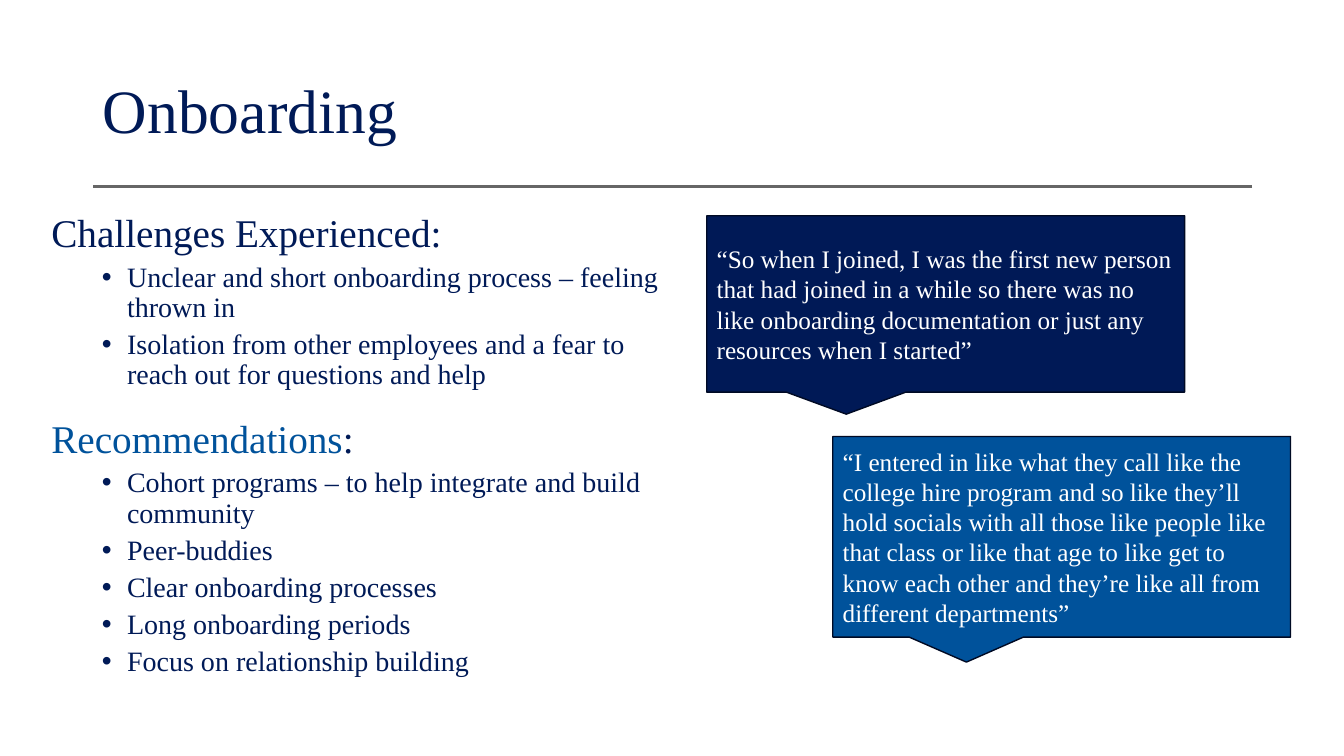
from lxml import etree
from pptx import Presentation, util as u
from pptx.dml.color import RGBColor
from pptx.enum import shapes, text
from pptx.oxml import ns

FONT = "Times New Roman"
COLORS = {"navy": "001A57", "deep": "001956", "blue": "00529B",
          "edge": "000A24", "rule": "666666", "white": "FFFFFF"}


def add_run(p, words, size, color):
    r = p.add_run()
    r.text = words
    r.font.name = FONT
    r.font.size = u.Pt(size)
    r.font.color.rgb = RGBColor.from_string(COLORS[color])


def set_bullet(p, left, indent, char=None):
    pPr = p._p.get_or_add_pPr()
    pPr.set("marL", str(u.Inches(left)))
    pPr.set("indent", str(u.Inches(indent)))
    if char is None:
        etree.SubElement(pPr, ns.qn("a:buNone"))
        return
    clr = etree.SubElement(pPr, ns.qn("a:buClr"))
    etree.SubElement(clr, ns.qn("a:srgbClr"), val=COLORS["navy"])
    etree.SubElement(pPr, ns.qn("a:buFont"), typeface="Arial")
    etree.SubElement(pPr, ns.qn("a:buChar"), char=char)


prs = Presentation()
prs.slide_width, prs.slide_height = u.Inches(13.33), u.Inches(7.5)
s = prs.slides.add_slide(prs.slide_layouts[3])  # title and two lists

# Rule under the title
rule = s.shapes.add_connector(shapes.MSO_CONNECTOR.STRAIGHT, u.Inches(12.42),
                              u.Inches(1.85), u.Inches(0.92), u.Inches(1.85))
rule.line.color.rgb = RGBColor.from_string(COLORS["rule"])
rule.line.width = u.Pt(1.5)
etree.SubElement(rule._element.spPr, ns.qn("a:effectLst"))

# Title
title = s.shapes.title
title.left, title.top = u.Inches(0.92), u.Inches(0.4)
title.width, title.height = u.Inches(11.5), u.Inches(1.45)
tf = title.text_frame
tf.auto_size = text.MSO_AUTO_SIZE.NONE
tf.vertical_anchor = text.MSO_ANCHOR.MIDDLE
p = tf.paragraphs[0]
p.alignment = text.PP_ALIGN.LEFT
p.line_spacing = 0.9
add_run(p, "Onboarding", 44, "navy")

# Headed lists: placeholder, position, heading runs, bullets
lists = [
    (1, (0.41, 2.07, 6.26, 1.89), [("Challenges Experienced:", "navy")],
     ["Unclear and short onboarding process – feeling thrown in",
      "Isolation from other employees and a fear to reach out for questions and help"]),
    (2, (0.41, 4.11, 6.06, 2.86), [("Recommendations", "blue"), (":", "navy")],
     ["Cohort programs – to help integrate and build community",
      "Peer-buddies",
      "Clear onboarding processes",
      "Long onboarding periods",
      "Focus on relationship building"]),
]
for idx, box, heading, bullets in lists:
    sp = s.placeholders[idx]
    sp.left, sp.top, sp.width, sp.height = [u.Inches(v) for v in box]
    tf = sp.text_frame
    tf.auto_size = text.MSO_AUTO_SIZE.NONE
    p = tf.paragraphs[0]
    p.line_spacing, p.space_before = 0.9, u.Pt(0)
    set_bullet(p, 0, 0)
    for words, color in heading:
        add_run(p, words, 28, color)
    for bullet in bullets:
        p = tf.add_paragraph()
        p.level = 1
        p.line_spacing, p.space_before = 0.9, u.Pt(5)
        set_bullet(p, 0.75, -0.25, "•")
        add_run(p, bullet, 20, "navy")

# Quote callouts
quotes = [
    ((7.01, 2.14, 4.74, 1.75), "deep",
     "“So when I joined, I was the first new person that had joined in a while "
     "so there was no like onboarding documentation or just any resources when I started”"),
    ((8.26, 4.33, 4.54, 1.99), "blue",
     "“I entered in like what they call like the college hire program and so like "
     "they’ll hold socials with all those like people like that class or like that age "
     "to like get to know each other and they’re like all from different departments”"),
]
for box, fill, quote in quotes:
    sp = s.shapes.add_shape(shapes.MSO_SHAPE.ROUNDED_RECTANGULAR_CALLOUT,
                            *[u.Inches(v) for v in box])
    for i, value in enumerate((-0.208, 0.625, 0)):
        sp.adjustments[i] = value
    sp.shadow.inherit = False
    sp.fill.solid()
    sp.fill.fore_color.rgb = RGBColor.from_string(COLORS[fill])
    sp.line.color.rgb = RGBColor.from_string(COLORS["edge"])
    sp.line.width = u.Pt(1)
    tf = sp.text_frame
    tf.word_wrap = True
    tf.vertical_anchor = text.MSO_ANCHOR.MIDDLE
    p = tf.paragraphs[0]
    p.alignment = text.PP_ALIGN.LEFT
    add_run(p, quote, 18, "white")

prs.save("out.pptx")
